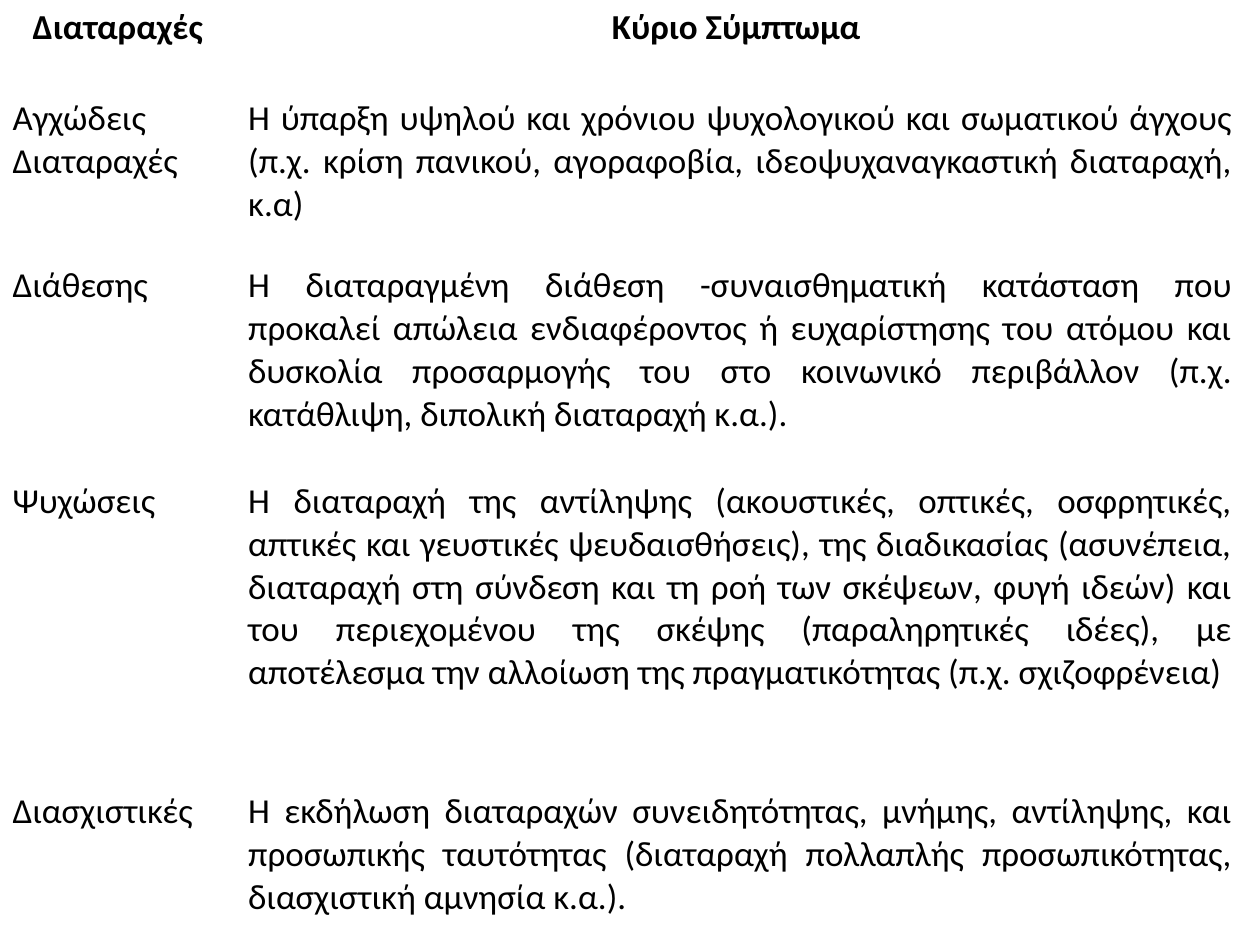
"""Build a slide with a table of mental disorders and their main symptoms."""
from lxml import etree
from pptx import Presentation
from pptx.dml.color import RGBColor
from pptx.enum.text import PP_ALIGN
from pptx.oxml.ns import qn
from pptx.util import Inches, Pt

CENTER, JUSTIFY = PP_ALIGN.CENTER, PP_ALIGN.JUSTIFY
BLACK = RGBColor(0, 0, 0)
WHITE = RGBColor(255, 255, 255)
FONT, SIZE = "Calibri", Pt(20)
BLANK = 6

COLS = [1.87, 8.01]
ROWS = [
    (0.72, "Διαταραχές", "Κύριο Σύμπτωμα "),
    (1.33, "Αγχώδεις Διαταραχές ",
     "Η ύπαρξη υψηλού και χρόνιου ψυχολογικού και σωματικού άγχους "
     "(π.χ. κρίση πανικού, αγοραφοβία, ιδεοψυχαναγκαστική διαταραχή, κ.α)"),
    (1.71, "Διάθεσης",
     "Η διαταραγμένη διάθεση -συναισθηματική κατάσταση που προκαλεί "
     "απώλεια ενδιαφέροντος ή ευχαρίστησης του ατόμου και δυσκολία "
     "προσαρμογής του στο κοινωνικό περιβάλλον (π.χ. κατάθλιψη, "
     "διπολική διαταραχή κ.α.)."),
    (2.46, "Ψυχώσεις",
     "Η διαταραχή της αντίληψης (ακουστικές, οπτικές, οσφρητικές, "
     "απτικές και γευστικές ψευδαισθήσεις), της διαδικασίας (ασυνέπεια, "
     "διαταραχή στη σύνδεση και τη ροή των σκέψεων, φυγή ιδεών) και του "
     "περιεχομένου της σκέψης (παραληρητικές ιδέες), με αποτέλεσμα την "
     "αλλοίωση της πραγματικότητας (π.χ. σχιζοφρένεια)"),
    (1.26, "Διασχιστικές",
     "Η εκδήλωση διαταραχών συνειδητότητας, μνήμης, αντίληψης, και "
     "προσωπικής ταυτότητας (διαταραχή πολλαπλής προσωπικότητας, "
     "διασχιστική αμνησία κ.α.). "),
]


def add_edges(cell):
    """Draw a thin white line on each side of a cell."""
    props = cell._tc.get_or_add_tcPr()
    for side in ("lnL", "lnR", "lnT", "lnB"):
        line = etree.SubElement(props, qn(f"a:{side}"), w=str(Pt(1)))
        fill = etree.SubElement(line, qn("a:solidFill"))
        etree.SubElement(fill, qn("a:srgbClr"), val=str(WHITE))


def fill_cell(cell, text, head):
    """Write and format the text of one cell."""
    add_edges(cell)
    cell.fill.background()
    para = cell.text_frame.paragraphs[0]
    para.text = text
    para.alignment = CENTER if head else JUSTIFY
    font = para.runs[0].font
    font.name, font.size, font.bold = FONT, SIZE, head
    font.color.rgb = BLACK


def main():
    """Make the slide and save it."""
    deck = Presentation()
    deck.slide_width, deck.slide_height = Inches(10), Inches(7.5)
    slide = deck.slides.add_slide(deck.slide_layouts[BLANK])
    high = sum(row[0] for row in ROWS)
    table = slide.shapes.add_table(
        len(ROWS), len(COLS), 0, 0, Inches(sum(COLS)), Inches(high)).table
    table.horz_banding = False
    for col, width in zip(table.columns, COLS):
        col.width = Inches(width)
    for r, (height, *texts) in enumerate(ROWS):
        table.rows[r].height = Inches(height)
        for c, text in enumerate(texts):
            fill_cell(table.cell(r, c), text, r == 0)
    deck.save("out.pptx")


if __name__ == "__main__":
    main()
